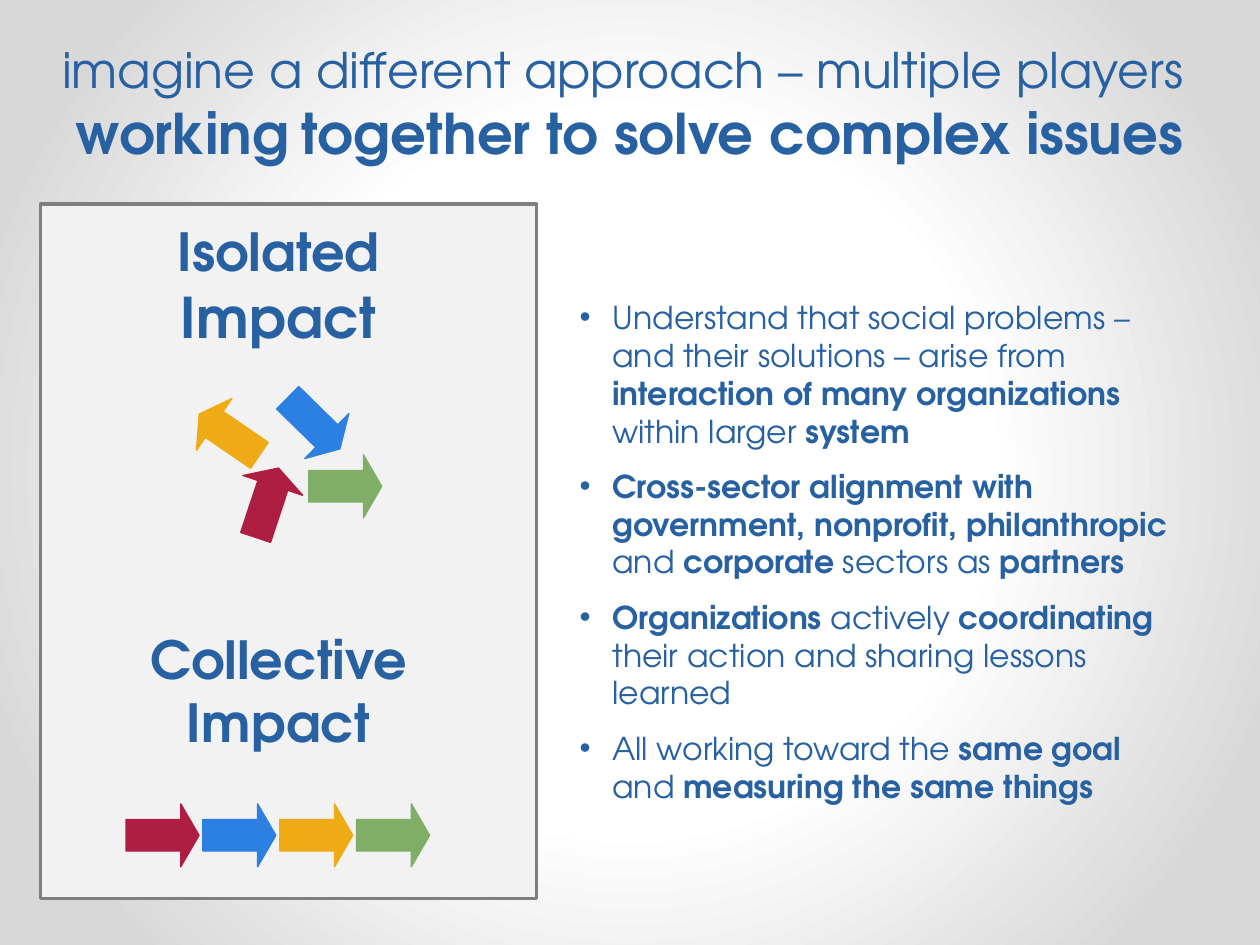
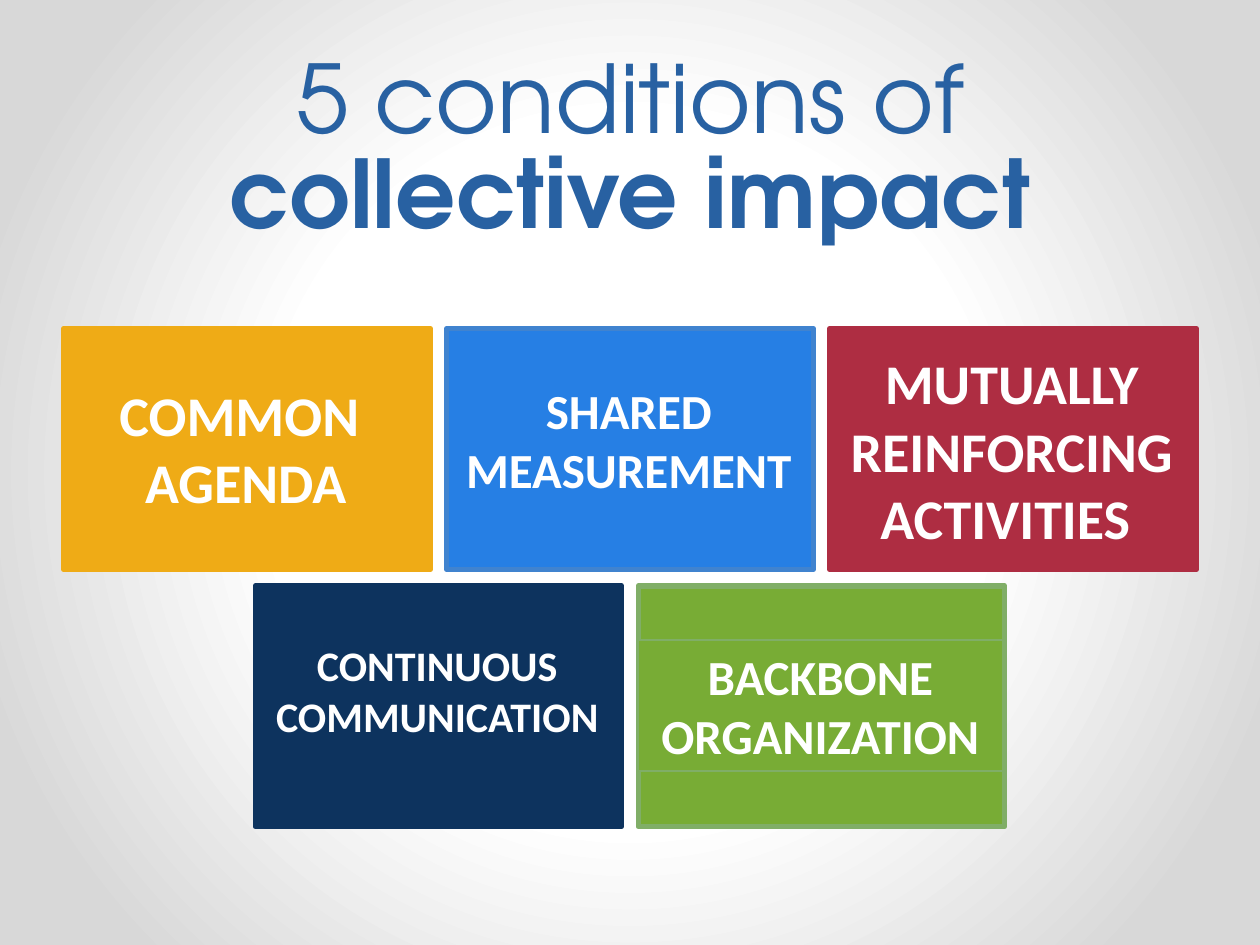
import pptx
import pptx.dml.color
import pptx.enum.shapes
import pptx.enum.text
import pptx.oxml
import pptx.oxml.ns
import pptx.util

COLORS = {
    "title": "2861A2",
    "white": "FFFFFF",
    "edge": "D8D8D8",
    "panel": "F2F2F2",
    "frame": "7F7F7F",
    "gold": "EFAB16",
    "sage": "80AE67",
    "crimson": "AE1E42",
    "blue": "2B80E2",
    "azure": "267FE4",
    "steel": "4083CF",
    "red": "AE2D42",
    "green": "78AC35",
    "navy": "0D335E",
}
HEADING_FONT = "TeX Gyre Adventor"
CARD_FONT = "Calibri"
CENTER = pptx.enum.text.PP_ALIGN.CENTER
TOP = pptx.enum.text.MSO_ANCHOR.TOP
MIDDLE = pptx.enum.text.MSO_ANCHOR.MIDDLE
RECTANGLE = pptx.enum.shapes.MSO_SHAPE.RECTANGLE
ARROW = pptx.enum.shapes.MSO_SHAPE.RIGHT_ARROW

presentation = pptx.Presentation()
presentation.slide_width = pptx.util.Inches(10)
presentation.slide_height = pptx.util.Inches(7.5)
COLUMNS, ROWS = 100, 75
column = presentation.slide_width / COLUMNS
row = presentation.slide_height / ROWS


def place(shape, left, top, width, height, fill=None, line=None, weight=0.75, anchor=TOP):
    shape.left, shape.width = round(left * column), round(width * column)
    shape.top, shape.height = round(top * row), round(height * row)
    shape.text_frame.word_wrap = True
    shape.text_frame.auto_size = pptx.enum.text.MSO_AUTO_SIZE.NONE
    shape.text_frame.vertical_anchor = anchor
    if fill:
        shape.shadow.inherit = False
        shape.fill.solid()
        shape.fill.fore_color.rgb = pptx.dml.color.RGBColor.from_string(COLORS[fill])
        shape.line.color.rgb = pptx.dml.color.RGBColor.from_string(COLORS[line or fill])
        shape.line.width = pptx.util.Pt(weight)
    return shape


def write(paragraph, text, size, bold=False, color="title", font=HEADING_FONT, alignment=CENTER):
    paragraph.alignment = alignment
    for number, part in enumerate(text.split("\n")):
        if number:
            paragraph.add_line_break()
        if part:
            run = paragraph.add_run()
            run.text = part
            run.font.size = pptx.util.Pt(size)
            run.font.bold = bold
            run.font.name = font
            run.font.color.rgb = pptx.dml.color.RGBColor.from_string(COLORS[color])


master = presentation.slide_master
master.background.fill.solid()
background = master.element.find(".//" + pptx.oxml.ns.qn("p:bgPr"))
stops = "".join(
    f'<a:gs pos="{share * 1000}"><a:srgbClr val="{COLORS[name]}"/></a:gs>'
    for share, name in [(0, "white"), (45, "white"), (87, "edge"), (100, "edge")]
)
background.replace(background[0], pptx.oxml.parse_xml(
    f'<a:gradFill {pptx.oxml.ns.nsdecls("a")} rotWithShape="1"><a:gsLst>{stops}</a:gsLst>'
    '<a:path path="circle"><a:fillToRect l="50000" t="50000" r="50000" b="50000"/></a:path>'
    '</a:gradFill>'
))

slide = presentation.slides.add_slide(presentation.slide_layouts[1])
title = place(slide.shapes.title, 0, 1.9, COLUMNS, 12.5, anchor=MIDDLE)
heading = title.text_frame.paragraphs[0]
write(heading, "imagine a different approach – multiple players \n", 28)
write(heading, "working", 32, bold=True)
write(heading, " ", 24)
write(heading, "together to solve complex issues", 32, bold=True)

place(slide.shapes.add_shape(RECTANGLE, 0, 0, 0, 0), 3.2, 16.2, 39.4, 55.1, "panel", "frame", 2)

body = place(slide.placeholders[1], 45, 16.2, 50, 55.1, anchor=MIDDLE)
points = [
    "Understand that social problems – and their solutions – arise from "
    "*interaction of many organizations *within larger *system",
    "*Cross-sector alignment with government, nonprofit, philanthropic* and "
    "*corporate* sectors as *partners",
    "*Organizations *actively *coordinating* their action and sharing lessons learned",
    "All working toward the *same goal *and *measuring the same things",
]
for number, point in enumerate(points):
    paragraph = body.text_frame.add_paragraph() if number else body.text_frame.paragraphs[0]
    paragraph.space_before = pptx.util.Pt(10 if number else 0)
    for position, part in enumerate(point.split("*")):
        write(paragraph, part, 18, bold=position % 2 == 1, alignment=pptx.enum.text.PP_ALIGN.LEFT)
    properties = paragraph._p.get_or_add_pPr()
    properties.set("marL", str(round(2.6 * column)))
    properties.set("indent", str(round(-2.6 * column)))
    for markup in (f'<a:buClr {{}}><a:srgbClr val="{COLORS["title"]}"/></a:buClr>',
                   '<a:buFont {} typeface="Arial"/>', '<a:buChar {} char="•"/>'):
        properties.append(pptx.oxml.parse_xml(markup.format(pptx.oxml.ns.nsdecls("a"))))

captions = [
    (16.9, 11.8, [("Isolated\n", 30), ("Impact", 32)]),
    (49.3, 11.1, [("Collective\nImpact", 30)]),
]
for top, height, parts in captions:
    caption = place(slide.shapes.add_textbox(0, 0, 0, 0), 7.5, top, 29.2, height)
    for text, size in parts:
        write(caption.text_frame.paragraphs[0], text, size, bold=True)

scattered = [
    (15.3, 32, 214.4, "gold"),
    (24.5, 36.1, 0, "sage"),
    (18.3, 37.4, 288.3, "crimson"),
    (22, 31.1, 44.4, "blue"),
]
aligned = [
    (10 + 6.1 * number, 63.8, 0, color)
    for number, color in enumerate(["crimson", "blue", "gold", "sage"])
]
for left, top, rotation, color in scattered + aligned:
    arrow = place(slide.shapes.add_shape(ARROW, 0, 0, 0, 0), left, top, 5.8, 5, color)
    arrow.adjustments[0], arrow.adjustments[1] = 0.5, 0.29
    arrow.rotation = rotation

slide = presentation.slides.add_slide(presentation.slide_layouts[5])
card_width, card_height, gap = 29.1, 19.1, 1.3
card_rows = [
    [
        ("COMMON \nAGENDA", 32, "gold", "gold", 3.6, 11.8, False),
        ("SHARED MEASUREMENT", 28, "azure", "steel", 3.6, 10.4, False),
        ("MUTUALLY\nREINFORCING ACTIVITIES ", 32, "red", "red", 1.1, 17.2, True),
    ],
    [
        ("CONTINUOUS COMMUNICATION", 24, "navy", "navy", 3.8, 9.1, False),
        ("BACKBONE ORGANIZATION", 28, "green", "sage", 4.3, 10.4, True),
    ],
]
for row_number, cards in enumerate(card_rows):
    margin = (COLUMNS - len(cards) * (card_width + gap) + gap) / 2
    top = 26.1 + row_number * (card_height + gap)
    for number, (text, size, fill, line, drop, height, framed) in enumerate(cards):
        left = margin + number * (card_width + gap)
        card = slide.shapes.add_shape(RECTANGLE, 0, 0, 0, 0)
        place(card, left, top, card_width, card_height, fill, line, 3)
        label = slide.shapes.add_textbox(0, 0, 0, 0)
        place(label, left, top + drop, 28.9, height, fill if framed else None, line)
        write(label.text_frame.paragraphs[0], text, size, bold=True, color="white", font=CARD_FONT)

title = place(slide.shapes.title, 0, 4.1, COLUMNS, 17.2)
heading = title.text_frame.paragraphs[0]
heading.line_spacing = pptx.util.Pt(54)
write(heading, "5 conditions of\n", 54)
write(heading, "collective impact", 54, bold=True)

presentation.save("out.pptx")
